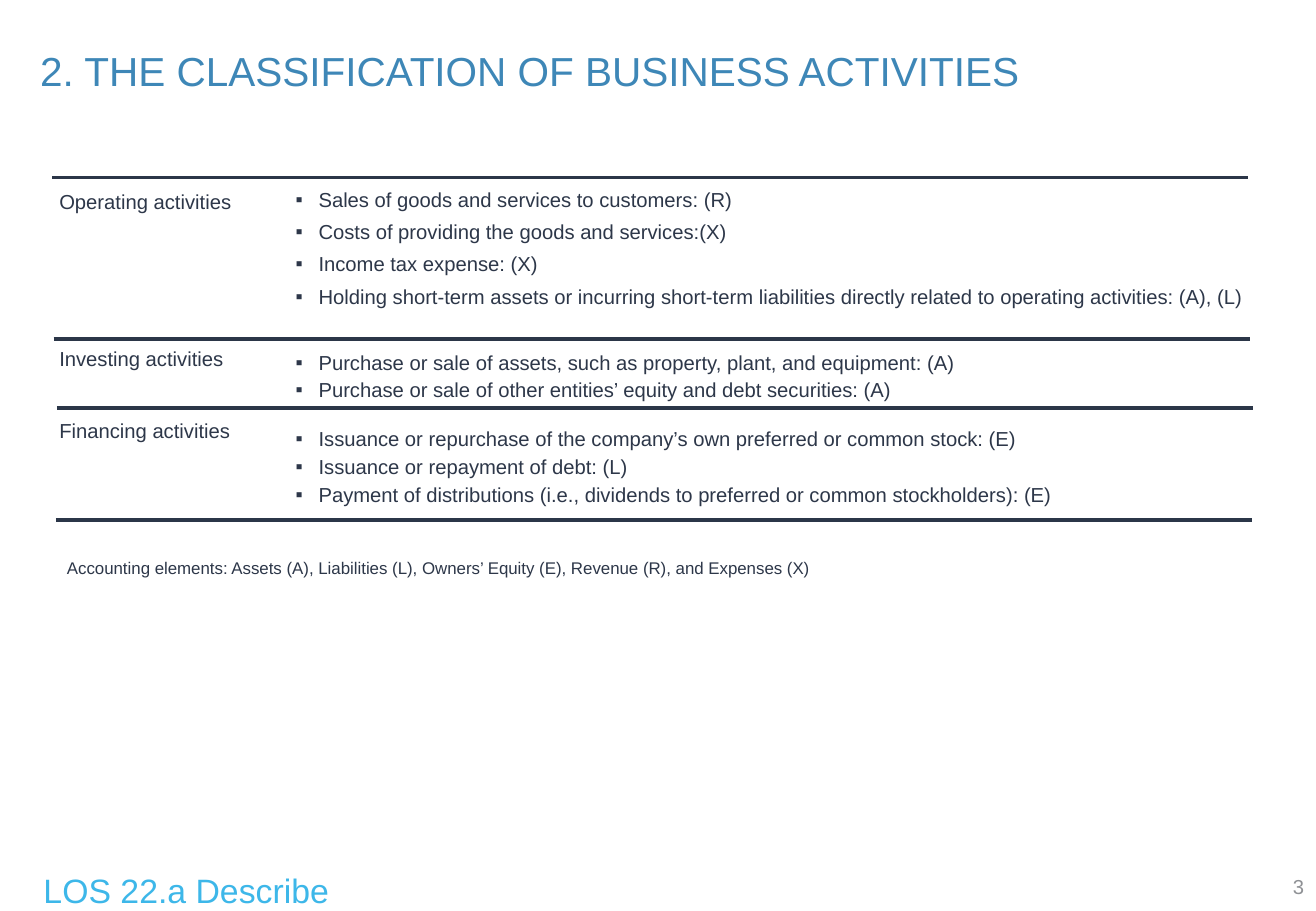
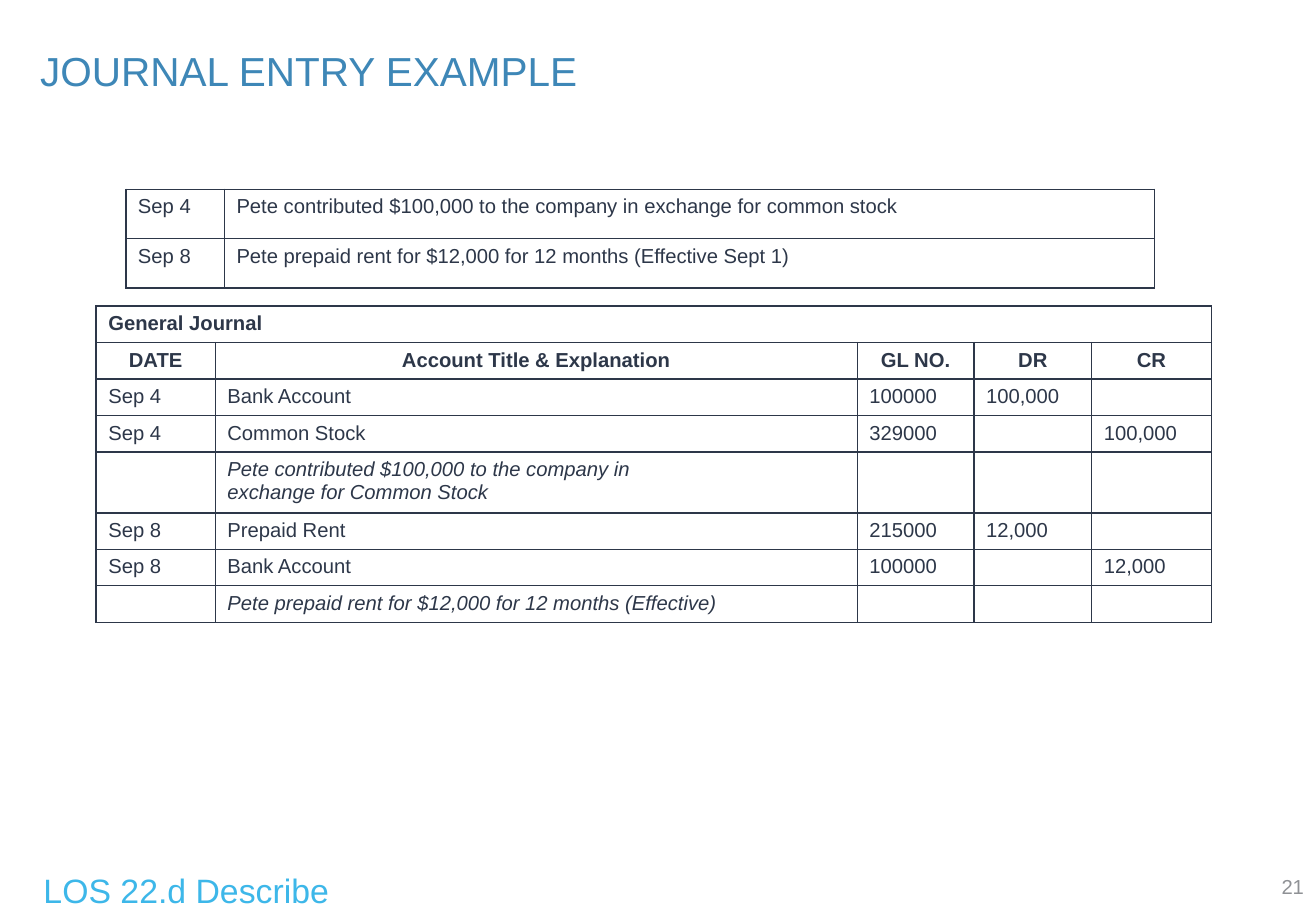
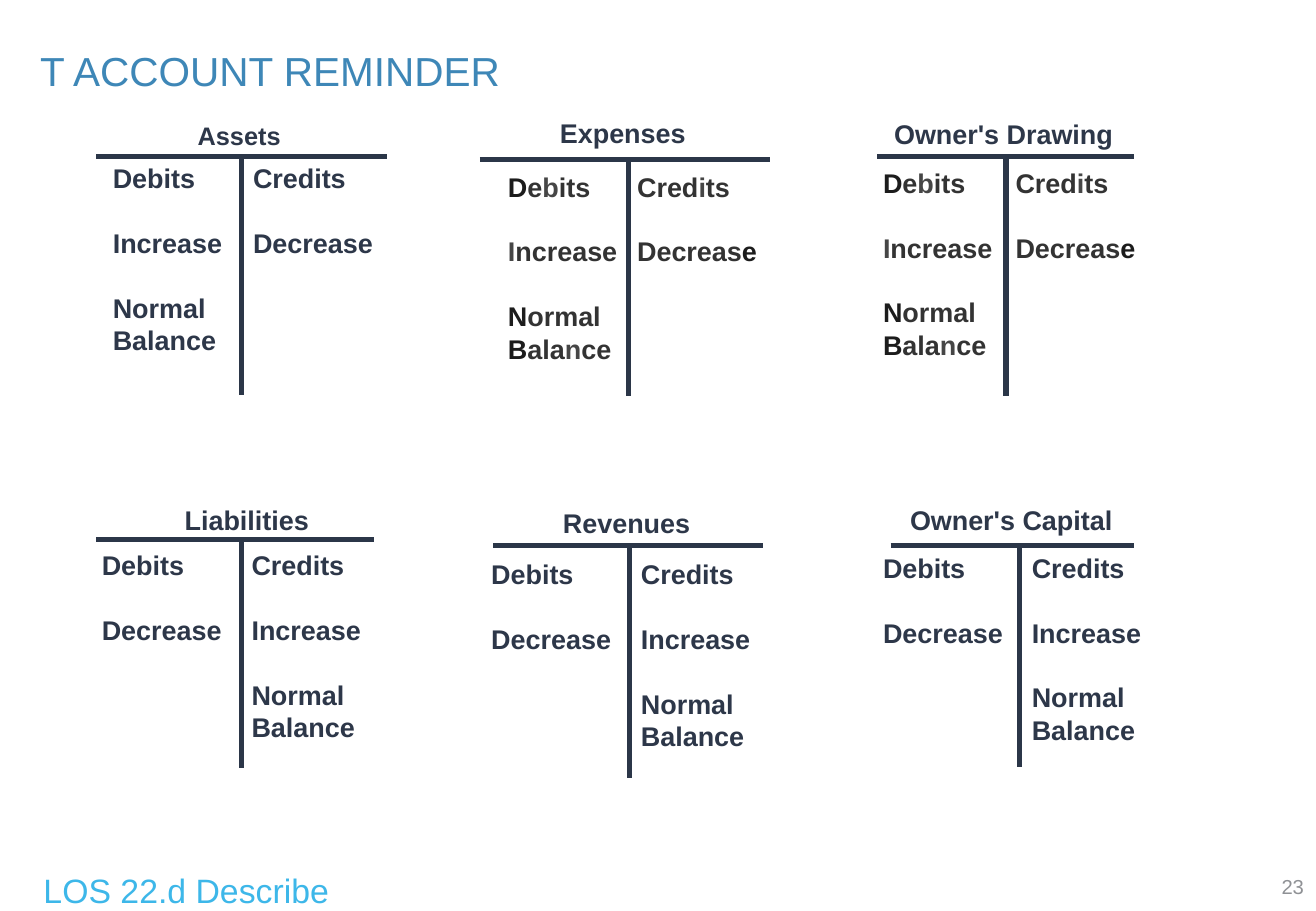
from lxml.etree import SubElement
from pptx import Presentation
from pptx.dml.color import RGBColor
from pptx.enum.shapes import MSO_CONNECTOR
from pptx.enum.text import MSO_ANCHOR, MSO_AUTO_SIZE, PP_ALIGN
from pptx.oxml import parse_xml
from pptx.oxml.ns import nsdecls, qn
from pptx.util import Cm, Pt

FONT = "Arial"
TITLE_BLUE = RGBColor(0x3E, 0x87, 0xB7)
FOOTER_BLUE = RGBColor(0x3D, 0xB7, 0xE9)
NUMBER_GREY = RGBColor(0x8F, 0x91, 0x95)
INK = RGBColor(0x2D, 0x37, 0x49)
RULE = RGBColor(0x2B, 0x36, 0x48)
DARK = RGBColor(0x1C, 0x1C, 0x1C)
MID = RGBColor(0x33, 0x33, 0x33)
LIGHT = RGBColor(0x46, 0x46, 0x46)

# Activity, label top, items top, gap between items in points, items
ACTIVITIES = [
    ("Operating activities", 3.96, 3.91, 4.8, [
        "Sales of goods and services to customers: (R)",
        "Costs of providing the goods and services:(X)",
        "Income tax expense: (X)",
        "Holding short-term assets or incurring short-term liabilities "
        "directly related to operating activities: (A), (L)",
    ]),
    ("Investing activities", 7.24, 7.32, 2, [
        "Purchase or sale of assets, such as property, plant, and equipment: (A)",
        "Purchase or sale of other entities’ equity and debt securities: (A)",
    ]),
    ("Financing activities", 8.74, 8.92, 2, [
        "Issuance or repurchase of the company’s own preferred or common stock: (E)",
        "Issuance or repayment of debt: (L)",
        "Payment of distributions (i.e., dividends to preferred or common "
        "stockholders): (E)",
    ]),
]
ELEMENTS_NOTE = ("Accounting elements: Assets (A), Liabilities (L), "
                 "Owners’ Equity (E), Revenue (R), and Expenses (X)")
ACTIVITY_RULES = [(1.09, 3.71), (1.12, 7.09), (1.19, 8.53), (1.17, 10.87)]

TRANSACTIONS = [
    ["Sep 4", "Pete contributed $100,000 to the company in exchange for common stock"],
    ["Sep 8", "Pete prepaid rent for $12,000 for 12 months (Effective Sept 1)"],
]
JOURNAL = [
    ["General Journal", "", "", "", ""],
    ["DATE", "Account Title & Explanation", "GL NO.", "DR", "CR"],
    ["Sep 4", "Bank Account", "100000", "100,000", ""],
    ["Sep 4", "Common Stock", "329000", "", "100,000"],
    ["", "Pete contributed $100,000 to the company in\nexchange for Common Stock",
     "", "", ""],
    ["Sep 8", "Prepaid Rent", "215000", "12,000", ""],
    ["Sep 8", "Bank Account", "100000", "", "12,000"],
    ["", "Pete prepaid rent for $12,000 for 12 months (Effective)", "", "", ""],
]

DEBIT_BALANCE = (["Debits", "Increase", "Normal", "Balance"], ["Credits", "Decrease"])
CREDIT_BALANCE = (["Debits", "Decrease"], ["Credits", "Increase", "Normal", "Balance"])
SHADES = {
    "Debits": [("D", DARK), ("e", MID), ("b", LIGHT), ("its", MID)],
    "Credits": [("Cred", MID), ("i", LIGHT), ("ts", MID)],
    "Increase": [("I", LIGHT), ("ncrease", MID)],
    "Decrease": [("Decreas", MID), ("e", DARK)],
    "Normal": [("N", DARK), ("ormal", MID)],
    "Balance": [("B", DARK), ("ala", MID), ("n", LIGHT), ("ce", MID)],
}
# Name, size, (name centre, top), (bar left, right, y), (stem x, bottom),
# (debit x, credit x, top), sides, shaded
ACCOUNTS = [
    ("Assets", 15, (5, 2.51), (2.01, 8.08, 3.28), (5.05, 8.26),
     (2.36, 5.29, 3.38), DEBIT_BALANCE, False),
    ("Expenses", 16, (13.02, 2.44), (10.03, 16.1, 3.33), (13.13, 8.28),
     (10.62, 13.32, 3.56), DEBIT_BALANCE, True),
    ("Owner's Drawing", 16, (20.98, 2.46), (18.34, 23.7, 3.28), (21.03, 8.28),
     (18.46, 21.23, 3.48), DEBIT_BALANCE, True),
    ("Liabilities", 16, (5.16, 10.52), (2.01, 7.82, 11.28), (5.05, 16.05),
     (2.13, 5.26, 11.48), CREDIT_BALANCE, False),
    ("Revenues", 16, (13.1, 10.59), (10.31, 15.95, 11.4), (13.16, 16.26),
     (10.27, 13.4, 11.66), CREDIT_BALANCE, False),
    ("Owner's Capital", 16, (21.14, 10.52), (18.62, 23.7, 11.4), (21.31, 16.03),
     (18.46, 21.57, 11.53), CREDIT_BALANCE, False),
]


def add_run(paragraph, text, size, color=INK, bold=False, italic=False):
    run = paragraph.add_run()
    run.text = text
    run.font.name = FONT
    run.font.size = Pt(size)
    run.font.color.rgb = color
    run.font.bold = bold
    run.font.italic = italic


def add_frame(slide, left, top, width, height):
    """Add a text box without insets and return its text frame."""
    frame = slide.shapes.add_textbox(Cm(left), Cm(top), Cm(width), Cm(height)).text_frame
    frame.word_wrap = True
    frame.margin_left = frame.margin_right = frame.margin_top = frame.margin_bottom = 0
    return frame


def next_paragraph(frame, index):
    return frame.add_paragraph() if index else frame.paragraphs[0]


def add_rule(slide, x1, y1, x2, y2, weight):
    rule = slide.shapes.add_connector(
        MSO_CONNECTOR.STRAIGHT, Cm(x1), Cm(y1), Cm(x2), Cm(y2))
    rule.line.color.rgb = RULE
    rule.line.width = Pt(weight)
    SubElement(rule._element.spPr, qn("a:effectLst"))


def add_titled_slide(deck, title, objective, number):
    """Add a slide with the shared title, footer and slide number."""
    slide = deck.slides.add_slide(deck.slide_layouts[5])
    heading = slide.shapes.title
    heading.left, heading.top = Cm(0.84), Cm(1.12)
    heading.width, heading.height = Cm(25.83), Cm(0.81)
    frame = heading.text_frame
    frame.auto_size = MSO_AUTO_SIZE.NONE
    frame.vertical_anchor = MSO_ANCHOR.MIDDLE
    frame.margin_left = frame.margin_right = 0
    frame.margin_top = frame.margin_bottom = Cm(0.1)
    paragraph = frame.paragraphs[0]
    paragraph.alignment = PP_ALIGN.LEFT
    paragraph.line_spacing = 0.9
    add_run(paragraph, title, 24, TITLE_BLUE)

    footer = add_frame(slide, 0.91, 18.19, 11.7, 0.85)
    add_run(footer.paragraphs[0], objective, 20, FOOTER_BLUE)

    page_number = add_frame(slide, 21.34, 18.03, 5.92, 1.02)
    page_number.vertical_anchor = MSO_ANCHOR.MIDDLE
    page_number.paragraphs[0].alignment = PP_ALIGN.RIGHT
    add_run(page_number.paragraphs[0], number, 12, NUMBER_GREY)
    return slide


def add_bullet(paragraph):
    properties = paragraph._p.get_or_add_pPr()
    properties.set("marL", str(Cm(0.48)))
    properties.set("indent", str(-Cm(0.48)))
    SubElement(properties, qn("a:buFont"), typeface=FONT)
    SubElement(properties, qn("a:buChar"), char="▪")


def add_activities(slide):
    for name, label_top, items_top, gap, items in ACTIVITIES:
        label = add_frame(slide, 1.24, label_top, 4.5, 0.5)
        add_run(label.paragraphs[0], name, 12)
        frame = add_frame(slide, 6.18, items_top, 20.2, 0.6 * len(items))
        for index, item in enumerate(items):
            paragraph = next_paragraph(frame, index)
            paragraph.space_after = Pt(gap)
            add_bullet(paragraph)
            add_run(paragraph, item, 12)
    note = add_frame(slide, 1.4, 11.66, 17, 0.43)
    add_run(note.paragraphs[0], ELEMENTS_NOTE, 10)
    for left, y in ACTIVITY_RULES:
        add_rule(slide, left, y, left + 25, y, 2.25)


def add_borders(cell):
    properties = cell._tc.get_or_add_tcPr()
    for position, side in enumerate(("lnL", "lnR", "lnT", "lnB")):
        properties.insert(position, parse_xml(
            f'<a:{side} {nsdecls("a")} w="12700"><a:solidFill>'
            f'<a:srgbClr val="{INK}"/></a:solidFill></a:{side}>'))


def add_grid(slide, left, top, widths, heights, rows, headed=False):
    """Add a bordered table; a headed one has a banner row, then column heads."""
    table = slide.shapes.add_table(
        len(rows), len(widths), Cm(left), Cm(top),
        Cm(sum(widths)), Cm(sum(heights))).table
    table.first_row = table.horz_banding = False
    for column, width in zip(table.columns, widths):
        column.width = Cm(width)
    for row, height in zip(table.rows, heights):
        row.height = Cm(height)
    for r, texts in enumerate(rows):
        bold = headed and r < 2
        explanation = not texts[0]
        for c, text in enumerate(texts):
            cell = table.cell(r, c)
            cell.fill.background()
            add_borders(cell)
            for index, line in enumerate(text.split("\n")):
                paragraph = next_paragraph(cell.text_frame, index)
                if headed and r == 1:
                    paragraph.alignment = PP_ALIGN.CENTER
                if line:
                    add_run(paragraph, line, 12, bold=bold, italic=explanation)
                else:
                    SubElement(paragraph._p, qn("a:endParaRPr"), sz="1200")
    if headed:
        table.cell(0, 0).merge(table.cell(0, len(widths) - 1))


def add_side(slide, left, top, words, shaded):
    """Add the words of one side of a T account."""
    frame = add_frame(slide, left, top, 3.4, 4.1)
    for index, word in enumerate(words):
        paragraph = next_paragraph(frame, index)
        paragraph.line_spacing = Pt(19.2)
        if index and word != "Balance":
            paragraph.space_before = Pt(19.2)
        for text, color in SHADES[word] if shaded else [(word, INK)]:
            add_run(paragraph, text, 16, color, bold=True)


def add_account(slide, name, size, heading, bar, stem, text_place, sides, shaded):
    centre, heading_top = heading
    bar_left, bar_right, bar_y = bar
    stem_x, stem_bottom = stem
    debit_x, credit_x, text_top = text_place
    add_rule(slide, bar_left, bar_y, bar_right, bar_y, 3)
    add_rule(slide, stem_x, bar_y, stem_x, stem_bottom, 3)
    paragraph = add_frame(slide, centre - 3, heading_top, 6, 0.69).paragraphs[0]
    paragraph.alignment = PP_ALIGN.CENTER
    paragraph.line_spacing = Pt(size * 1.2)
    add_run(paragraph, name, size, bold=True)
    for left, words in zip((debit_x, credit_x), sides):
        add_side(slide, left, text_top, words, shaded)


def main():
    deck = Presentation()
    deck.slide_width, deck.slide_height = Cm(27.51), Cm(19.05)

    activities = add_titled_slide(
        deck, "2. THE CLASSIFICATION OF BUSINESS ACTIVITIES", "LOS 22.a Describe", "3")
    add_activities(activities)

    journal = add_titled_slide(deck, "JOURNAL ENTRY EXAMPLE", "LOS 22.d Describe", "21")
    add_grid(journal, 2.63, 3.96, [2.06, 19.44], [1.03] * 2, TRANSACTIONS)
    journal_heights = [1.2 if any("\n" in text for text in row) else 0.73
                       for row in JOURNAL]
    add_grid(journal, 2.01, 6.4, [2.49, 13.42, 2.44, 2.46, 2.5],
             journal_heights, JOURNAL, headed=True)

    accounts = add_titled_slide(deck, "T ACCOUNT REMINDER", "LOS 22.d Describe", "23")
    for account in ACCOUNTS:
        add_account(accounts, *account)

    deck.save("out.pptx")


if __name__ == "__main__":
    main()
